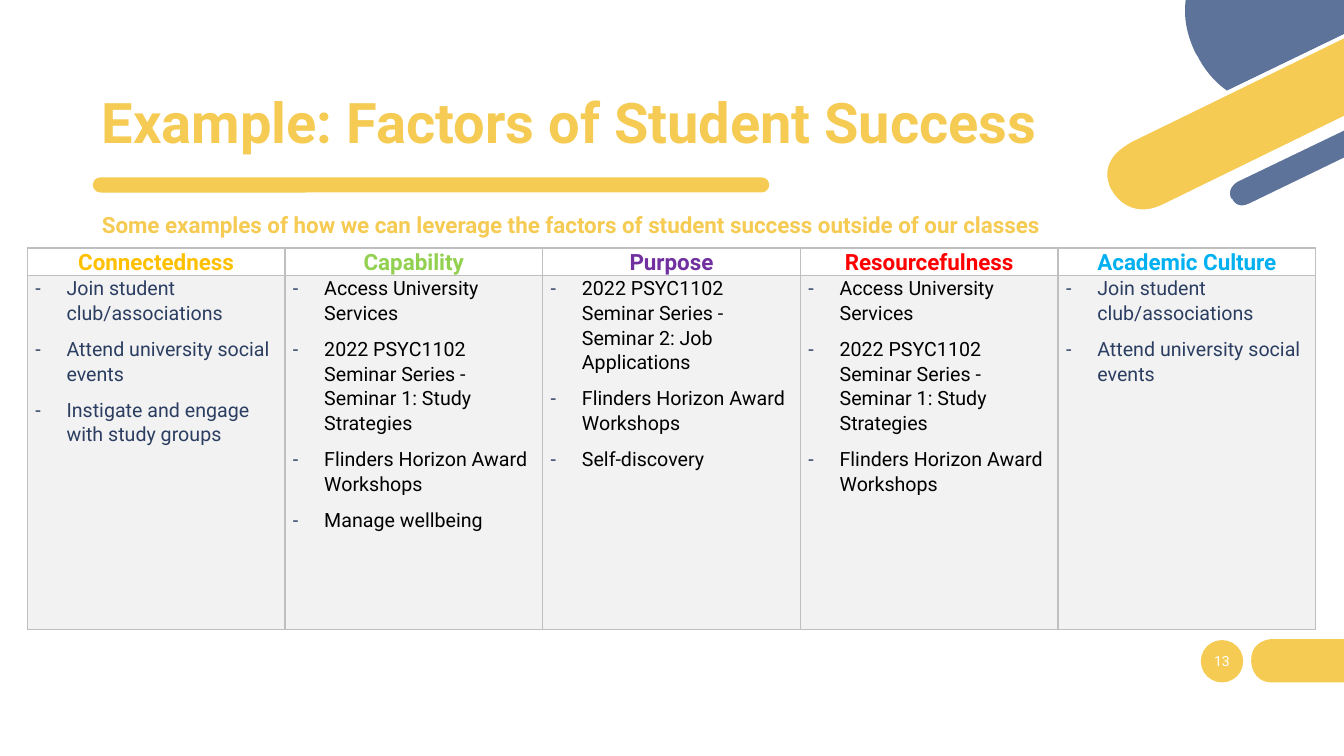
from pptx import Presentation
from pptx.dml.color import RGBColor
from pptx.enum.shapes import MSO_SHAPE as Shape
from pptx.enum.text import MSO_ANCHOR as Anchor, MSO_AUTO_SIZE as AutoSize, PP_ALIGN as Align
from pptx.oxml.ns import qn
from pptx.util import Inches, Pt
from lxml.etree import SubElement

YELLOW, BLUE, NAVY, WHITE = "F6CB53", "5D739A", "2B3E61", "FFFFFF"
BLACK, GREY, BORDER = "000000", "F2F2F2", "BFBFBF"

# Outlines: a start point, then lines (x, y) and curves (two controls, end)
PAGE_TAB = [(12.62, 6.77), (13.34, 6.77), (13.34, 6.34), (12.62, 6.34),
            (12.62, 6.34, 12.41, 6.34, 12.41, 6.55), (12.41, 6.56),
            (12.41, 6.56, 12.41, 6.77, 12.62, 6.77)]
DISC_RIM = [(13.33, 0.81), (13.06, 0.94), (12.74, 1.1, 12.44, 1.08, 12.19, 0.89),
            (11.99, 0.74, 11.89, 0.55, 11.89, 0.55), (11.88, 0.52),
            (11.79, 0.34, 11.75, 0.16, 11.78, 0), (11.74, 0),
            (11.71, 0.17, 11.75, 0.35, 11.84, 0.54), (11.86, 0.57),
            (11.86, 0.58, 11.96, 0.77, 12.16, 0.92),
            (12.28, 1.01, 12.44, 1.09, 12.65, 1.09),
            (12.77, 1.09, 12.91, 1.06, 13.08, 0.98), (13.33, 0.86)]
WIDE_BAR = [(11.21, 1.39), (11.21, 1.39, 10.85, 1.57, 11.01, 1.89), (11.01, 1.9),
            (11.01, 1.9, 11.17, 2.22, 11.54, 2.04), (13.33, 1.17), (13.33, 0.36)]
DISC = [(11.88, 0.56), (11.88, 0.56, 11.97, 0.76, 12.17, 0.9), (13.33, 0.34),
        (13.34, 0), (11.76, 0), (11.74, 0.15, 11.76, 0.33, 11.86, 0.53)]
THIN_BAR = [(13.34, 1.26), (12.27, 1.78), (12.27, 1.78, 12.13, 1.85, 12.2, 1.97),
            (12.2, 1.98), (12.2, 1.98, 12.26, 2.11, 12.4, 2.04), (13.34, 1.58)]
THIN_RIM = [(12.39, 2.02), (12.27, 2.08, 12.22, 1.98, 12.22, 1.97), (12.21, 1.97),
            (12.16, 1.86, 12.28, 1.8, 12.28, 1.8), (13.34, 1.29), (13.34, 1.24),
            (12.26, 1.76), (12.26, 1.76, 12.19, 1.8, 12.17, 1.87),
            (12.15, 1.91, 12.16, 1.95, 12.18, 1.99),
            (12.2, 2.03, 12.25, 2.08, 12.32, 2.08),
            (12.35, 2.08, 12.38, 2.08, 12.41, 2.06), (13.34, 1.61), (13.34, 1.56)]
WIDE_RIM = [(11.53, 2.03), (11.19, 2.19, 11.03, 1.9, 11.03, 1.89), (11.02, 1.88),
            (10.96, 1.75, 10.97, 1.64, 11.06, 1.53),
            (11.13, 1.46, 11.22, 1.41, 11.22, 1.41), (13.33, 0.38), (13.33, 0.34),
            (11.2, 1.37), (11.19, 1.38, 11.02, 1.46, 10.96, 1.63),
            (10.93, 1.71, 10.94, 1.8, 10.99, 1.9), (10.99, 1.91),
            (10.99, 1.91, 11.1, 2.12, 11.33, 2.12),
            (11.39, 2.12, 11.46, 2.1, 11.54, 2.06), (13.33, 1.19), (13.33, 1.15)]
CORNER = [(DISC_RIM, WHITE), (WIDE_BAR, YELLOW), (DISC, BLUE),
          (THIN_BAR, BLUE), (THIN_RIM, WHITE), (WIDE_RIM, WHITE)]

# Table content: heading, heading colour, item colour, items
CLUBS = ["Join student club/associations", "Attend university social events"]
AWARD = "Flinders Horizon Award Workshops"
STUDY = ["Access University Services",
         "2022 PSYC1102 Seminar Series - Seminar 1: Study Strategies", AWARD]
FACTORS = [
    ("Connectedness", "FFC000", NAVY, CLUBS + ["Instigate and engage with study groups"]),
    ("Capability", "92D050", BLACK, STUDY + ["Manage wellbeing"]),
    ("Purpose", "7030A0", BLACK,
     ["2022 PSYC1102 Seminar Series - Seminar 2: Job Applications", AWARD, "Self-discovery"]),
    ("Resourcefulness", "FF0000", BLACK, STUDY),
    ("Academic Culture", "00B0F0", NAVY, CLUBS),
]


def paint(target, color):
    """Give a shape or cell a solid fill."""
    target.fill.solid()
    target.fill.fore_color.rgb = RGBColor.from_string(color)


def finish(shape, color):
    paint(shape, color)
    shape.line.fill.background()
    shape.shadow.inherit = False


def write(para, text, size, color, bold=False, align=Align.LEFT, spacing=None):
    para.text = text
    para.alignment = align
    para.line_spacing = spacing
    para.space_before = Pt(0)
    for span in para.runs:
        font = span.font
        font.name, font.size, font.bold = "Roboto", Pt(size), bold
        font.color.rgb = RGBColor.from_string(color)


def place(shape, left, top, width, height):
    shape.left, shape.top = Inches(left), Inches(top)
    shape.width, shape.height = Inches(width), Inches(height)


def draw_outline(page, outline, color):
    ends = [(Inches(part[-2]), Inches(part[-1])) for part in outline]
    builder = page.shapes.build_freeform(*ends[0], scale=1.0)
    builder.add_line_segments(ends[1:], close=True)
    shape = builder.convert_to_shape()
    # Bend the segments that have control points
    segments = list(shape._element.iter(qn("a:lnTo")))
    for segment, part in zip(segments, outline[1:]):
        if len(part) == 6:
            segment.tag = qn("a:cubicBezTo")
            segment.remove(segment[0])
            for x, y in zip(part[::2], part[1::2]):
                SubElement(segment, qn("a:pt"), x=str(Inches(x) - shape.left),
                           y=str(Inches(y) - shape.top))
    finish(shape, color)


def add_preset(page, kind, left, top, width, height):
    shape = page.shapes.add_shape(kind, 0, 0, 0, 0)
    place(shape, left, top, width, height)
    finish(shape, YELLOW)
    return shape


def add_header(page, left, top, width):
    title, body = page.placeholders
    place(title, left, top, width, 0.74)
    place(body, left, top + 1.22, width, 0.77)
    for box, text, size, anchor in (
            (title, "Example: Factors of Student Success", 40, Anchor.BOTTOM),
            (body, "Some examples of how we can leverage the factors of student "
                   "success outside of our classes", 16, Anchor.TOP)):
        frame = box.text_frame
        frame.auto_size, frame.vertical_anchor = AutoSize.NONE, anchor
        para = frame.paragraphs[0]
        write(para, text, size, YELLOW, True, spacing=0.9)
        props = para._p.get_or_add_pPr()
        props.set("marL", "0")
        props.set("indent", "0")
        SubElement(props, qn("a:buNone"))
    rule = add_preset(page, Shape.ROUNDED_RECTANGLE, left + 0.01, top + 0.91, 6.71, 0.15)
    rule.adjustments[0] = 0.5


def add_page_number(page, left, top):
    add_preset(page, Shape.OVAL, left, top, 0.42, 0.42)
    draw_outline(page, PAGE_TAB, YELLOW)
    box = page.shapes.add_textbox(0, 0, 0, 0)
    place(box, left - 0.09, top + 0.01, 0.6, 0.4)
    box.text_frame.word_wrap = True
    box.text_frame.vertical_anchor = Anchor.MIDDLE
    write(box.text_frame.paragraphs[0], "13", 10, WHITE, align=Align.CENTER)


def add_dash(para):
    props = para._p.get_or_add_pPr()
    props.set("marL", str(Inches(0.31)))
    props.set("indent", str(-Inches(0.31)))
    SubElement(SubElement(props, qn("a:buClr")), qn("a:srgbClr"), val=NAVY)
    SubElement(props, qn("a:buFont"), typeface="Roboto")
    SubElement(props, qn("a:buChar"), char="-")


def format_cell(cell, color=None):
    cell.margin_left = cell.margin_right = Inches(0.08)
    cell.margin_top = cell.margin_bottom = 0
    props = cell._tc.get_or_add_tcPr()
    for side in ("a:lnL", "a:lnR", "a:lnT", "a:lnB"):
        line = SubElement(props, qn(side), w=str(Pt(1)))
        SubElement(SubElement(line, qn("a:solidFill")), qn("a:srgbClr"), val=BORDER)
    if color:
        paint(cell, color)
    else:
        cell.fill.background()


def add_factor_table(page, left, top, width, head_height, body_height):
    frame = page.shapes.add_table(2, len(FACTORS), 0, 0, 0, 0)
    place(frame, left, top, width, head_height + body_height)
    table = frame.table
    table.first_row = table.horz_banding = False
    table.rows[0].height, table.rows[1].height = Inches(head_height), Inches(body_height)
    for index, (heading, color, item_color, items) in enumerate(FACTORS):
        table.columns[index].width = Inches(width / len(FACTORS))
        head, body = table.cell(0, index), table.cell(1, index)
        format_cell(head)
        format_cell(body, GREY)
        write(head.text_frame.paragraphs[0], heading, 16, color, True, Align.CENTER, 1.07)
        for row, item in enumerate(items):
            para = body.text_frame.add_paragraph() if row else body.text_frame.paragraphs[0]
            write(para, item, 14, item_color, spacing=1.07)
            para.space_before = Pt(8 if row else 0)
            add_dash(para)


def main():
    deck = Presentation()
    deck.slide_width, deck.slide_height = Inches(13.33), Inches(7.5)
    page = deck.slides.add_slide(deck.slide_layouts[1])
    # Corner decoration
    for outline, color in CORNER:
        draw_outline(page, outline, color)
    # Title, rule and lead line
    add_header(page, 0.91, 0.85, 11.5)
    # Five factors and page number
    add_factor_table(page, 0.27, 2.46, 12.78, 0.27, 3.51)
    add_page_number(page, 11.91, 6.35)
    deck.save("out.pptx")


if __name__ == "__main__":
    main()
